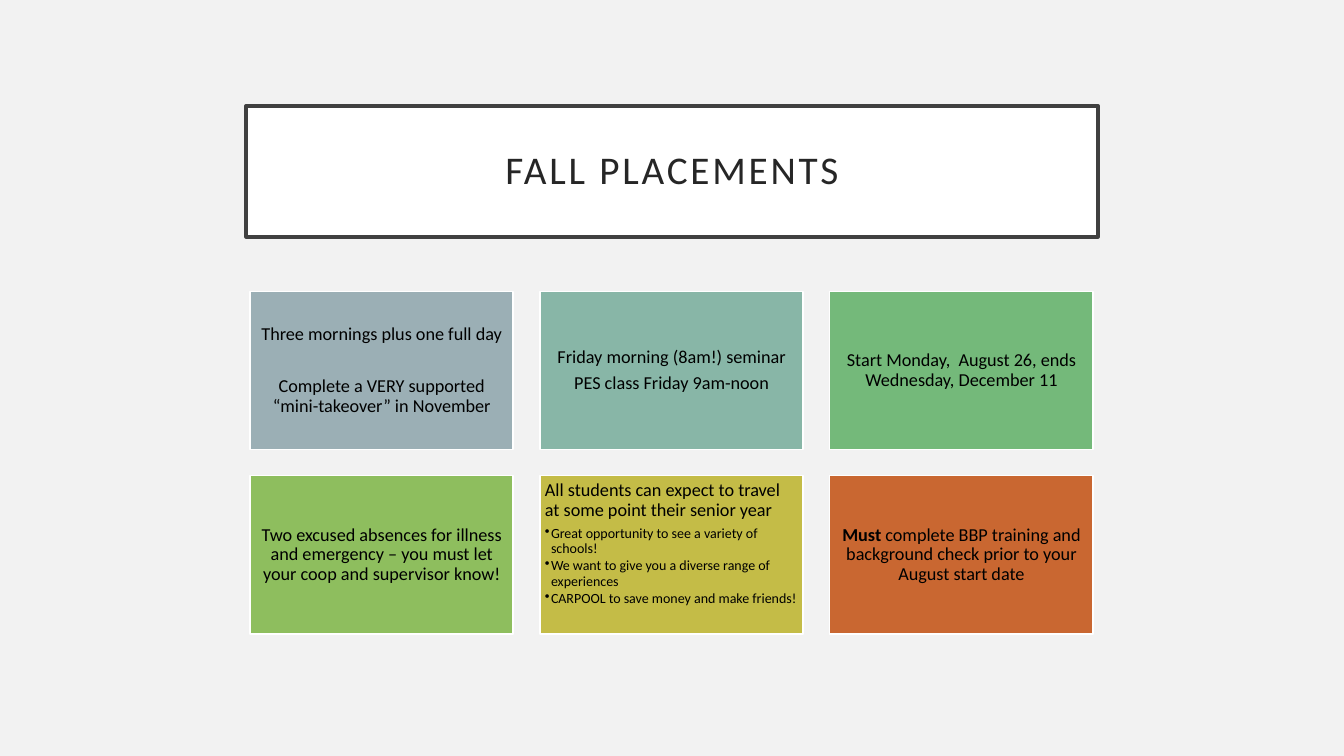
from dataclasses import dataclass

from lxml import etree
from pptx import Presentation
from pptx.dml.color import RGBColor
from pptx.enum.shapes import MSO_SHAPE
from pptx.enum.text import MSO_ANCHOR, MSO_AUTO_SIZE, PP_ALIGN
from pptx.oxml.ns import qn
from pptx.util import Inches, Pt

RECT = MSO_SHAPE.RECTANGLE
TOP, MIDDLE = MSO_ANCHOR.TOP, MSO_ANCHOR.MIDDLE
LEFT, CENTER = PP_ALIGN.LEFT, PP_ALIGN.CENTER


@dataclass(frozen=True)
class Theme:
    font: str = "Calibri"
    back: str = "F2F2F2"
    white: str = "FFFFFF"
    frame: str = "404040"
    head: str = "262626"
    ink: str = "000000"
    cards: tuple = ("9BAFB5", "88B6A7", "74B97A", "8EBE5E", "C4BC47", "C96731")
    title: float = 28
    body: float = 13
    small: float = 10


theme = Theme()


def paint(shape, fill, line, width, inset, anchor):
    shape.fill.solid()
    shape.fill.fore_color.rgb = RGBColor.from_string(fill)
    shape.line.color.rgb = RGBColor.from_string(line)
    shape.line.width = Pt(width)
    frame = shape.text_frame
    frame.word_wrap = True
    frame.auto_size = MSO_AUTO_SIZE.NONE
    frame.vertical_anchor = anchor
    frame.margin_left = frame.margin_right = Inches(inset)
    frame.margin_top = frame.margin_bottom = Inches(inset)
    return frame


def write(para, text, size, color, align, bold=False):
    """Add one run to the paragraph and set the paragraph's alignment."""
    para.alignment = align
    para.line_spacing = 0.9
    run = para.add_run()
    run.text = text
    run.font.name = theme.font
    run.font.size = Pt(size)
    run.font.bold = bold
    run.font.color.rgb = RGBColor.from_string(color)
    return run


prs = Presentation()
prs.slide_width, prs.slide_height = Inches(13.33), Inches(7.5)
slide = prs.slides.add_slide(prs.slide_layouts[5])
slide.background.fill.solid()
slide.background.fill.fore_color.rgb = RGBColor.from_string(theme.back)

# Title
title = slide.shapes.title
title.left, title.top = Inches(2.44), Inches(1.05)
title.width, title.height = Inches(8.45), Inches(1.3)
frame = paint(title, theme.white, theme.frame, 2.5, 0.2, MIDDLE)
run = write(frame.paragraphs[0], "FALL PLACEMENTS", theme.title, theme.head, CENTER)
run.font._element.set("spc", "200")

# Cards: each paragraph is a list of (text, bold) runs
cards = [
    [[("Three mornings plus one full day", False)],
     [("Complete a VERY supported “mini-takeover” in November", False)]],
    [[("Friday morning (8am!) seminar", False)],
     [("PES class Friday 9am-noon", False)]],
    [[("Start Monday,  August 26, ends Wednesday, December 11", False)]],
    [[("Two excused absences for illness and emergency – you must let your "
       "coop and supervisor know!", False)]],
    [[("All students can expect to travel at some point their senior year", False)]],
    [[("Must", True),
      (" complete BBP training and background check prior to your August "
       "start date", False)]],
]
points = [
    "Great opportunity to see a variety of schools!",
    "We want to give you a diverse range of experiences",
    "CARPOOL to save money and make friends!",
]
TRAVEL = 4

frames = []
for i, (paras, color) in enumerate(zip(cards, theme.cards)):
    row, col = divmod(i, 3)
    card = slide.shapes.add_shape(
        RECT, Inches(2.48 + col * 2.875), Inches(2.89 + row * 1.83),
        Inches(2.61), Inches(1.57))
    card.shadow.inherit = False
    anchor, align = (TOP, LEFT) if i == TRAVEL else (MIDDLE, CENTER)
    frame = paint(card, color, theme.white, 1, 0.05, anchor)
    frames.append(frame)
    for j, runs in enumerate(paras):
        para = frame.add_paragraph() if j else frame.paragraphs[0]
        para.space_after = Pt(4.5)
        for text, bold in runs:
            write(para, text, theme.body, theme.ink, align, bold)

# Wide gap between the two statements of the first card
frames[0].paragraphs[0].space_after = Pt(23.5)

# Bullets of the travel card
for text in points:
    para = frames[TRAVEL].add_paragraph()
    para.level = 1
    para.space_after = Pt(1.5)
    write(para, text, theme.small, theme.ink, LEFT)
    props = para._p.get_or_add_pPr()
    props.set("marL", str(Inches(0.06)))
    props.set("indent", str(Inches(-0.06)))
    etree.SubElement(props, qn("a:buChar")).set("char", "•")

prs.save("out.pptx")
